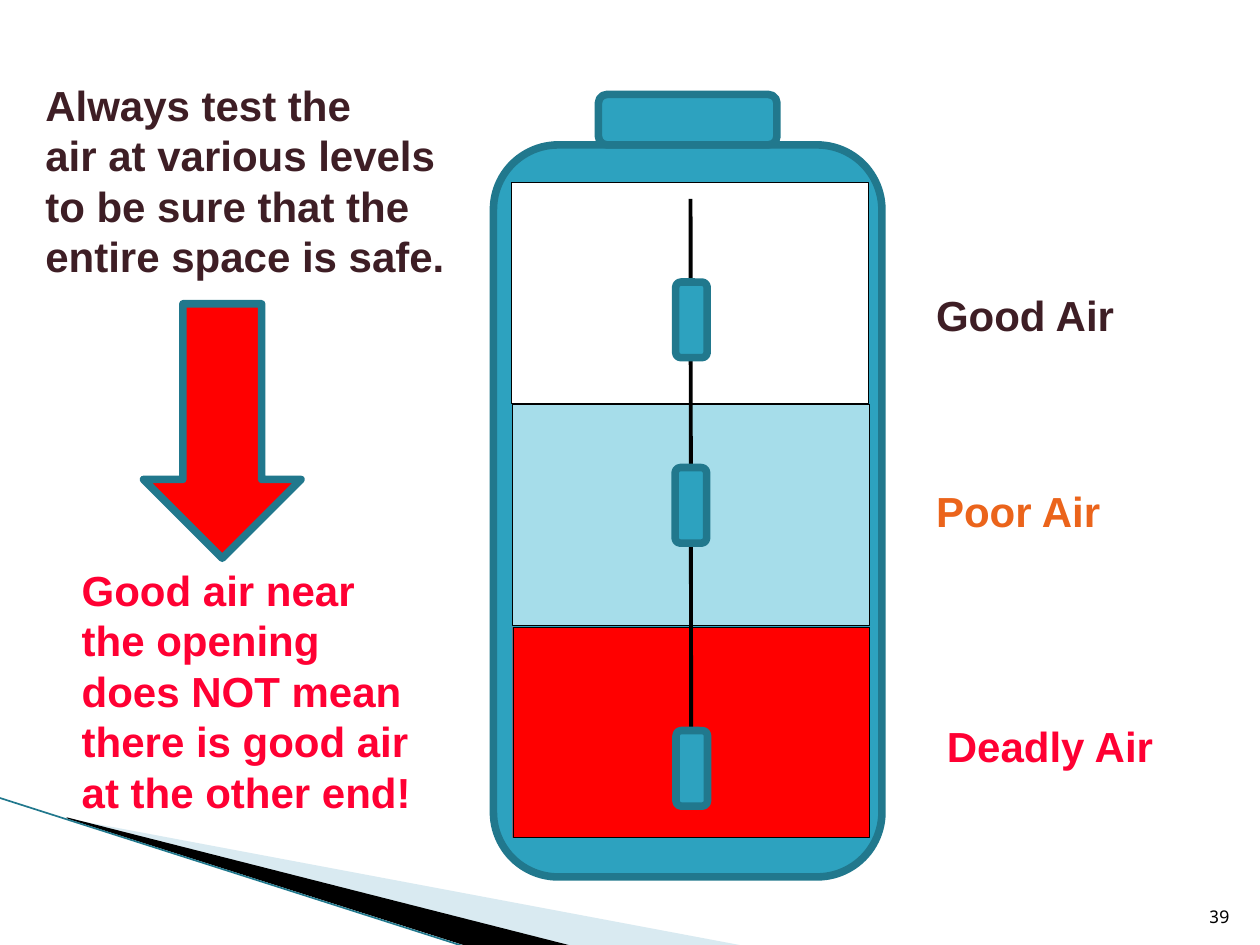
from typing import NamedTuple

from lxml import etree
from pptx import Presentation
from pptx.dml.color import RGBColor
from pptx.enum import shapes, text
from pptx.oxml.ns import qn
from pptx.util import Pt

TEAL, DARK_TEAL, BROWN, RED, PINK_RED = "2DA2BF", "21788D", "3E1E25", "FF0000", "FF0033"
WHITE, BLACK = "FFFFFF", "000000"
HEADING = {"size": Pt(24), "name": "Arial", "bold": True}
NUMBER = {"size": Pt(10), "name": "Noto Sans Mono", "bold": False}


class Box(NamedTuple):
    left: float
    top: float
    width: float
    height: float


class Block(NamedTuple):
    box: Box
    kind: shapes.MSO_SHAPE
    fill: str
    line: str
    weight: float


class Label(NamedTuple):
    box: Box
    words: str
    color: str


def rgb(value: str) -> RGBColor:
    return RGBColor.from_string(value)


def place(shape, box: Box) -> None:
    for name, value in box._asdict().items():
        setattr(shape, name, Pt(value))


def write(shape, lines: list[str], color: str, font_format: dict,
          align=text.PP_ALIGN.LEFT, anchor=text.MSO_ANCHOR.TOP, wrap: bool = True) -> None:
    frame = shape.text_frame
    frame.text = "\n".join(lines)
    frame.auto_size = text.MSO_AUTO_SIZE.NONE
    frame.word_wrap = wrap
    frame.vertical_anchor = anchor
    for paragraph in frame.paragraphs:
        paragraph.alignment = align
        paragraph.space_before = Pt(0)
        for name, value in font_format.items():
            setattr(paragraph.font, name, value)
        paragraph.font.color.rgb = rgb(color)


def add_label(slide, label: Label, font_format: dict = HEADING, **options) -> None:
    shape = slide.shapes.add_textbox(*map(Pt, label.box))
    write(shape, [label.words], label.color, font_format, **options)


def add_block(slide, block: Block) -> None:
    shape = slide.shapes.add_shape(block.kind, *map(Pt, block.box))
    shape.shadow.inherit = False
    shape.fill.solid()
    shape.fill.fore_color.rgb = rgb(block.fill)
    shape.line.color.rgb = rgb(block.line)
    shape.line.width = Pt(block.weight)


def add_line(slide, start: tuple, end: tuple, color: str, weight: float) -> None:
    line = slide.shapes.add_connector(shapes.MSO_CONNECTOR.STRAIGHT, *map(Pt, start + end))
    line.line.color.rgb = rgb(color)
    line.line.width = Pt(weight)
    etree.SubElement(line._element.spPr, qn("a:effectLst"))


def add_wedge(slide, points: list[tuple], color: str, opacity: int = 100) -> None:
    builder = slide.shapes.build_freeform(*points[0], scale=Pt(1))
    builder.add_line_segments(points[1:], close=True)
    shape = builder.convert_to_shape()
    shape.shadow.inherit = False
    shape.fill.solid()
    shape.fill.fore_color.rgb = rgb(color)
    shape.line.fill.background()
    if opacity < 100:
        color_element = shape._element.spPr.find(qn("a:solidFill"))[0]
        etree.SubElement(color_element, qn("a:alpha"), val=str(opacity * 1000))


def add_corner_decoration(slide) -> None:
    add_wedge(slide, [(39.6, 468.4), (428.4, 540.6), (328.3, 540.6), (39.6, 468)], "A0CBDC", 40)
    add_wedge(slide, [(38.2, 467.3), (329, 540.7), (267.8, 541.4), (38.9, 468)], BLACK)
    add_line(slide, (-0.7, 455.8), (267.1, 541.4), DARK_TEAL, 0.95)


def add_tank(slide) -> None:
    rounded, rectangle = shapes.MSO_SHAPE.ROUNDED_RECTANGLE, shapes.MSO_SHAPE.RECTANGLE
    for box in (Box(282, 82.8, 222, 418.3), Box(342, 54, 102, 28.8)):
        add_block(slide, Block(box, rounded, TEAL, DARK_TEAL, 4.33))

    air_layers = [
        Block(Box(292.3, 104.4, 204, 126), rectangle, WHITE, BLACK, 0.5),
        Block(Box(292.7, 231.2, 204, 126), rectangle, "A6DDEA", BLACK, 0.25),
        Block(Box(293, 358.4, 204, 120.3), rectangle, RED, BLACK, 0.25),
    ]
    for layer in air_layers:
        add_block(slide, layer)

    add_line(slide, (394.6, 113.6), (395, 462), BLACK, 2.25)
    for left, top in ((386.1, 161.2), (385.8, 267.2), (386.3, 417.5)):
        add_block(slide, Block(Box(left, top, 18, 43.2), rounded, TEAL, DARK_TEAL, 4.33))


def main() -> None:
    presentation = Presentation()
    presentation.slide_width, presentation.slide_height = Pt(720), Pt(540)
    slide = presentation.slides.add_slide(presentation.slide_layouts[5])

    add_corner_decoration(slide)
    add_label(slide, Label(Box(681, 504.6, 28.8, 28.8), "39", BLACK), NUMBER,
              align=text.PP_ALIGN.RIGHT, anchor=text.MSO_ANCHOR.BOTTOM)

    labels = [
        Label(Box(527.8, 162, 156, 36.4), "Good Air", BROWN),
        Label(Box(527.8, 273.9, 138, 36.4), "Poor Air", "EB641B"),
        Label(Box(534, 408.2, 156, 36.4), "Deadly Air", PINK_RED),
        Label(Box(39.6, 319, 204, 152.6),
              "Good air near the opening does NOT mean there is good air at the other end!",
              PINK_RED),
    ]
    for label in labels:
        add_label(slide, label)

    add_tank(slide)

    title = slide.shapes.title
    place(title, Box(18.7, 41.8, 246.2, 123.8))
    write(title, ["Always test the", "air at various levels", "to be sure that the",
                  "entire space is safe."], BROWN, HEADING, wrap=False)
    add_block(slide, Block(Box(82, 173.6, 90, 145.4), shapes.MSO_SHAPE.DOWN_ARROW,
                           RED, DARK_TEAL, 4.33))

    presentation.save("out.pptx")


if __name__ == "__main__":
    main()
